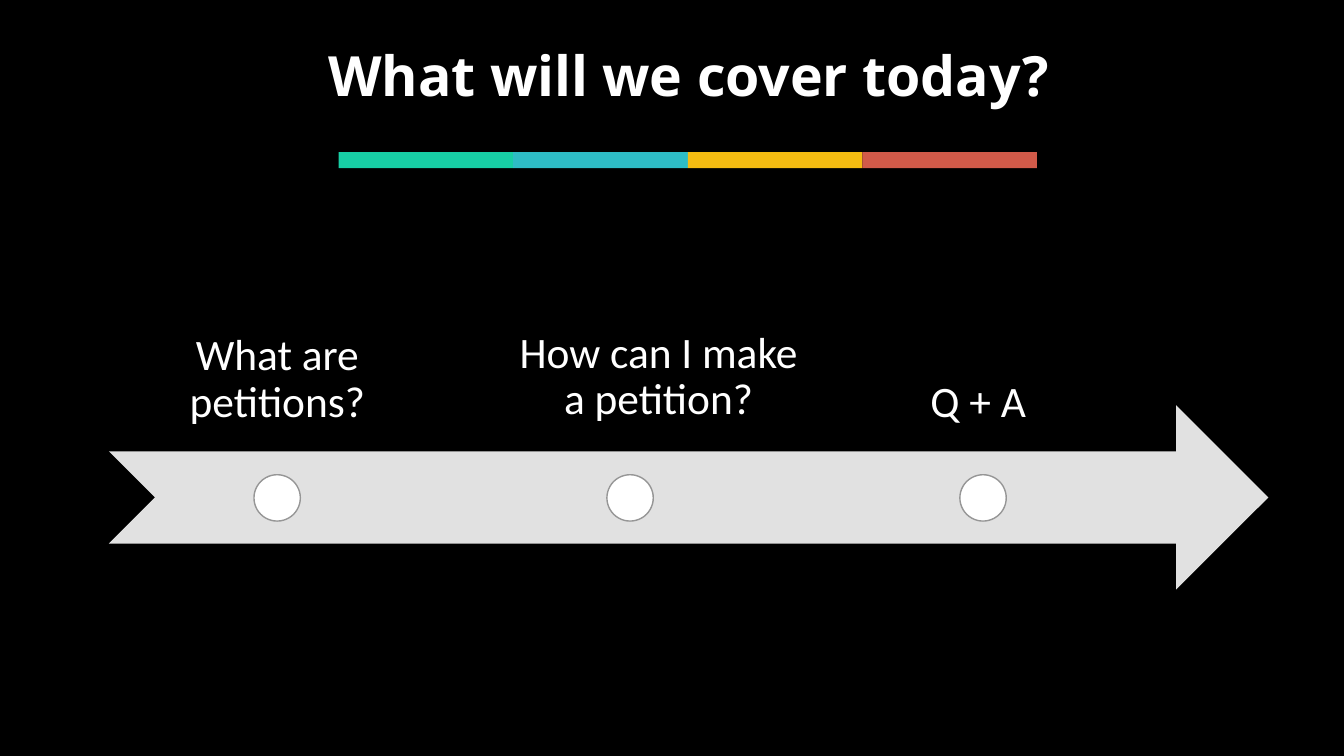
"""Build the agenda slide: a title, a four-colour rule and a three-stop arrow timeline."""
import pptx
import pptx.util
import pptx.dml.color
import pptx.enum.shapes
import pptx.enum.text

RGBColor = pptx.dml.color.RGBColor
BLACK = RGBColor(0x00, 0x00, 0x00)
WHITE = RGBColor(0xFF, 0xFF, 0xFF)
ARROW_GREY = RGBColor(0xE1, 0xE1, 0xE1)
LINE_GREY = RGBColor(0x96, 0x96, 0x96)
GREEN = RGBColor(0x17, 0xCF, 0xA5)
TEAL = RGBColor(0x2E, 0xBC, 0xC5)
YELLOW = RGBColor(0xF5, 0xBC, 0x11)
RED = RGBColor(0xD1, 0x5A, 0x49)

SHAPE = pptx.enum.shapes.MSO_SHAPE
ANCHOR = pptx.enum.text.MSO_ANCHOR

prs = pptx.Presentation()
prs.slide_width = pptx.util.Inches(13.33)
prs.slide_height = pptx.util.Inches(7.5)
s = prs.slides.add_slide(prs.slide_layouts[5])
s.background.fill.solid()
s.background.fill.fore_color.rgb = BLACK


def percent_box(x, y, w, h):
    """Turn percentages of the slide into left, top, width and height."""
    sides = (prs.slide_width, prs.slide_height) * 2
    return [int(side * share / 100) for side, share in zip(sides, (x, y, w, h))]


def add_filled(kind, box, color, line=None):
    """Add a flat preset shape with an optional thin outline."""
    sp = s.shapes.add_shape(kind, *percent_box(*box))
    sp.shadow.inherit = False
    sp.fill.solid()
    sp.fill.fore_color.rgb = color
    if line is None:
        sp.line.fill.background()
    else:
        sp.line.color.rgb = line
        sp.line.width = pptx.util.Pt(1)


title = s.shapes.title
title.left, title.top, title.width, title.height = percent_box(21.68, 7.47, 59.11, 5.87)
title.text_frame.text = "What will we cover today?"
texts = [(title.text_frame, ANCHOR.MIDDLE, 0.05,
          {"name": "Open Sans", "size": pptx.util.Pt(39.6), "bold": True})]

for i, color in enumerate([GREEN, TEAL, YELLOW, RED]):
    add_filled(SHAPE.RECTANGLE, (25.2 + 12.99 * i, 20.13, 12.99, 2.13), color)

add_filled(SHAPE.NOTCHED_RIGHT_ARROW, (8.1, 53.6, 86.27, 24.4), ARROW_GREY)

stops = [
    ("What are petitions?", 8.1, 35.33, ANCHOR.BOTTOM),
    ("How can I make a petition?", 36.46, 40.53, ANCHOR.TOP),
    ("Q + A", 60.25, 35.33, ANCHOR.BOTTOM),
]
for i, (label, x, y, anchor) in enumerate(stops):
    add_filled(SHAPE.OVAL, (18.9 + 26.26 * i, 62.8, 3.45, 6.13), WHITE, LINE_GREY)
    tf = s.shapes.add_textbox(*percent_box(x, y, 25.06, 24.4)).text_frame
    tf.text = label
    texts.append((tf, anchor, 0.24, {"name": "Calibri", "size": pptx.util.Pt(31)}))

for tf, anchor, inset, font in texts:
    tf.auto_size = pptx.enum.text.MSO_AUTO_SIZE.NONE
    tf.word_wrap = True
    tf.vertical_anchor = anchor
    for side in ("left", "top", "right", "bottom"):
        setattr(tf, "margin_" + side, pptx.util.Inches(inset))
    p = tf.paragraphs[0]
    p.alignment = pptx.enum.text.PP_ALIGN.CENTER
    p.line_spacing = 0.9
    r = p.runs[0]
    r.font.color.rgb = WHITE
    for name, value in font.items():
        setattr(r.font, name, value)

prs.save("out.pptx")
